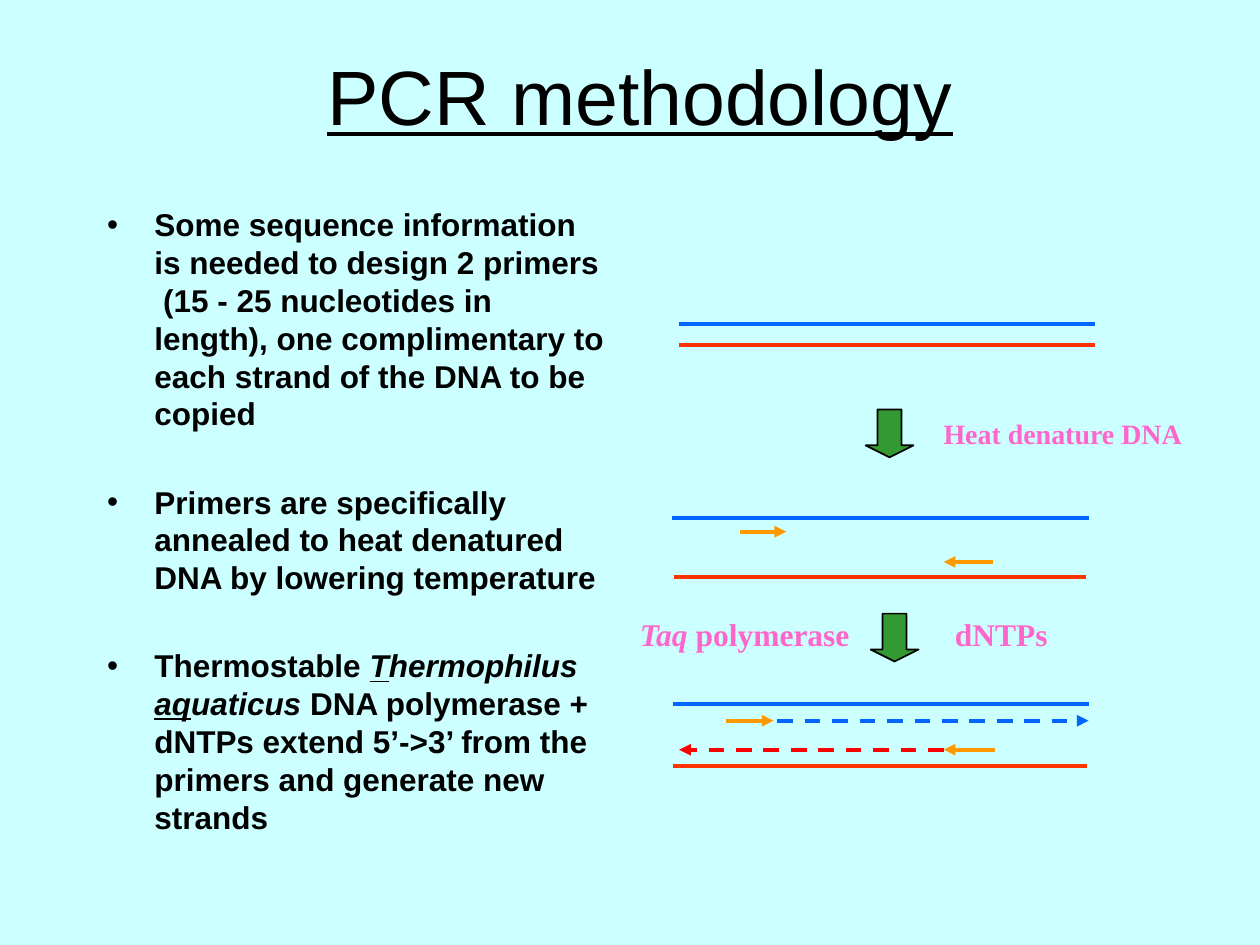
from dataclasses import dataclass

import pptx
import pptx.dml.color
import pptx.enum.dml
import pptx.enum.shapes
import pptx.enum.text
import pptx.oxml
import pptx.oxml.ns
import pptx.util
from pptx.util import Inches

BLACK = "000000"
BLUE = "0066FF"
RED = "FF3300"
NEW_RED = "FF0000"
ORANGE = "FF9900"
GREEN = "339933"
PINK = "FF66CC"


@dataclass
class Strand:
    start: float
    end: float
    y: float
    color: str
    arrow: bool = False
    dashed: bool = False


@dataclass
class Span:
    text: str
    italic: bool = False
    underline: bool = False


@dataclass
class Label:
    left: float
    top: float
    width: float
    height: float
    size: int
    spans: list[Span]


STRANDS = [
    Strand(5.39, 8.69, 2.57, BLUE),
    Strand(5.39, 8.69, 2.74, RED),
    Strand(5.33, 8.64, 4.11, BLUE),
    Strand(5.35, 8.62, 4.58, RED),
    Strand(5.87, 6.24, 4.22, ORANGE, arrow=True),
    Strand(7.88, 7.49, 4.46, ORANGE, arrow=True),
    Strand(5.34, 8.64, 5.59, BLUE),
    Strand(7.9, 7.49, 5.95, ORANGE, arrow=True),
    Strand(7.49, 5.39, 5.95, NEW_RED, arrow=True, dashed=True),
    Strand(5.34, 8.63, 6.08, RED),
    Strand(5.76, 6.14, 5.72, ORANGE, arrow=True),
    Strand(6.17, 8.64, 5.72, BLUE, arrow=True, dashed=True),
]
STEP_ARROWS = [(6.87, 3.25), (6.91, 4.87)]
LABELS = [
    Label(7.39, 3.26, 2.1, 0.36, 16, [Span("Heat denature DNA")]),
    Label(4.98, 4.83, 1.89, 0.4, 18, [Span("Taq", italic=True), Span(" polymerase")]),
    Label(7.48, 4.83, 0.97, 0.4, 18, [Span("dNTPs")]),
]
BULLETS = [
    [Span("Some sequence information is needed to design 2 primers  (15 - 25 nucleotides "
          "in length), one complimentary to each strand of the DNA to be copied")],
    [Span("Primers are specifically annealed to heat denatured DNA by lowering temperature")],
    [
        Span("Thermostable "),
        Span("T", italic=True, underline=True),
        Span("hermophilus ", italic=True),
        Span("aq", italic=True, underline=True),
        Span("uaticus", italic=True),
        Span(" DNA polymerase + dNTPs extend 5’->3’ from the primers and generate new strands"),
    ],
]


def paint(color_format, color: str) -> None:
    color_format.rgb = pptx.dml.color.RGBColor.from_string(color)


def fill_solid(fill, color: str) -> None:
    fill.solid()
    paint(fill.fore_color, color)


def write_spans(para, spans: list[Span], font: str, size: int, color: str, bold: bool) -> None:
    for span in spans:
        run = para.add_run()
        run.text = span.text
        run.font.name = font
        run.font.size = pptx.util.Pt(size)
        run.font.bold = bold
        run.font.italic = span.italic
        run.font.underline = span.underline
        paint(run.font.color, color)


def place(shape, left: float, top: float, width: float, height: float) -> None:
    shape.left, shape.top = Inches(left), Inches(top)
    shape.width, shape.height = Inches(width), Inches(height)


def draw_title(page) -> None:
    title = page.shapes.title
    place(title, 0.83, 0.13, 8.5, 1.25)
    frame = title.text_frame
    frame.auto_size = pptx.enum.text.MSO_AUTO_SIZE.NONE
    frame.vertical_anchor = pptx.enum.text.MSO_ANCHOR.MIDDLE
    para = frame.paragraphs[0]
    para.alignment = pptx.enum.text.PP_ALIGN.CENTER
    write_spans(para, [Span("PCR methodology", underline=True)], "Arial", 44, BLACK, False)


def draw_bullets(page) -> None:
    body = page.placeholders[1]
    place(body, 0.75, 1.58, 4.17, 4.5)
    frame = body.text_frame
    frame.auto_size = pptx.enum.text.MSO_AUTO_SIZE.NONE
    for index, spans in enumerate(BULLETS):
        para = frame.add_paragraph() if index else frame.paragraphs[0]
        para.line_spacing = pptx.util.Pt(21.6)
        para.space_before = pptx.util.Pt(28.8 if index else 0)
        write_spans(para, spans, "Arial", 18, BLACK, True)


def draw_strand(page, strand: Strand) -> None:
    connector = page.shapes.add_connector(
        pptx.enum.shapes.MSO_CONNECTOR.STRAIGHT,
        Inches(strand.start), Inches(strand.y), Inches(strand.end), Inches(strand.y),
    )
    line = connector.line
    line.width = pptx.util.Pt(2.25)
    fill_solid(line.fill, strand.color)
    if strand.dashed:
        line.dash_style = pptx.enum.dml.MSO_LINE.DASH
    properties = connector._element.spPr
    if strand.arrow:
        tail = pptx.oxml.parse_xml(
            f'<a:tailEnd {pptx.oxml.ns.nsdecls("a")} type="triangle"/>'
        )
        properties.find(pptx.oxml.ns.qn("a:ln")).append(tail)
    properties.append(pptx.oxml.parse_xml(f'<a:effectLst {pptx.oxml.ns.nsdecls("a")}/>'))


def draw_step_arrow(page, left: float, top: float) -> None:
    arrow = page.shapes.add_shape(
        pptx.enum.shapes.MSO_SHAPE.DOWN_ARROW,
        Inches(left), Inches(top), Inches(0.38), Inches(0.38),
    )
    arrow.adjustments[0] = 0.5
    arrow.adjustments[1] = 0.25
    arrow.shadow.inherit = False
    fill_solid(arrow.fill, GREEN)
    fill_solid(arrow.line.fill, BLACK)
    arrow.line.width = pptx.util.Pt(1)


def draw_label(page, label: Label) -> None:
    box = page.shapes.add_textbox(
        Inches(label.left), Inches(label.top), Inches(label.width), Inches(label.height)
    )
    frame = box.text_frame
    frame.word_wrap = False
    frame.auto_size = pptx.enum.text.MSO_AUTO_SIZE.SHAPE_TO_FIT_TEXT
    write_spans(frame.paragraphs[0], label.spans, "Times New Roman", label.size, PINK, True)


def main() -> None:
    deck = pptx.Presentation()
    deck.slide_width, deck.slide_height = Inches(10), Inches(7.5)
    page = deck.slides.add_slide(deck.slide_layouts[1])
    fill_solid(page.background.fill, "CCFFFF")
    draw_title(page)
    draw_bullets(page)
    for strand in STRANDS:
        draw_strand(page, strand)
    for left, top in STEP_ARROWS:
        draw_step_arrow(page, left, top)
    for label in LABELS:
        draw_label(page, label)
    deck.save("out.pptx")


if __name__ == "__main__":
    main()
